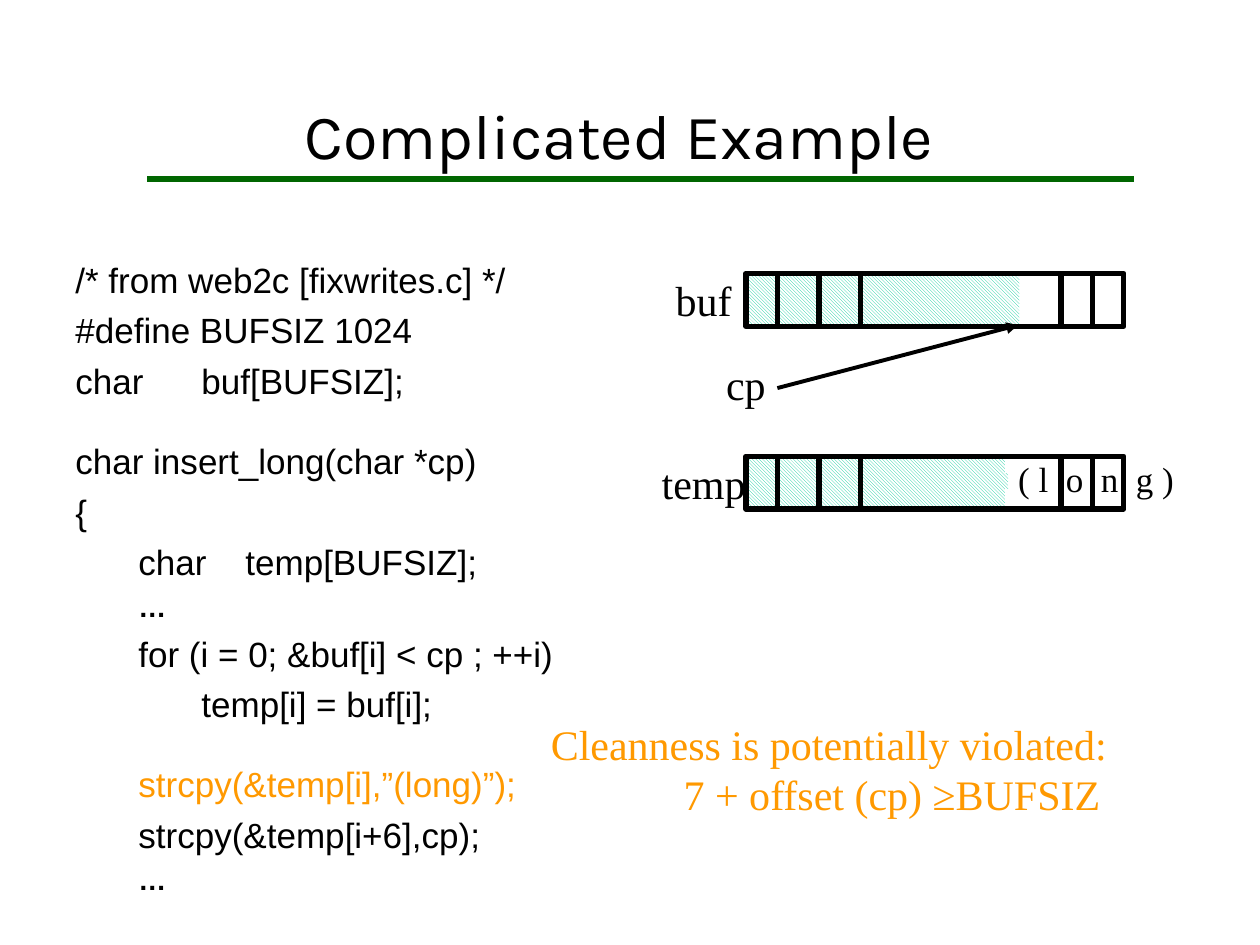
"""Build the slide "Complicated Example": a code listing beside two buffer diagrams."""
import pptx
import pptx.dml.color
import pptx.enum.dml
import pptx.enum.shapes
import pptx.enum.text
import pptx.oxml.ns
import pptx.util
from lxml import etree

Inches = pptx.util.Inches
Pt = pptx.util.Pt
BLACK = pptx.dml.color.RGBColor(0x00, 0x00, 0x00)
WHITE = pptx.dml.color.RGBColor(0xFF, 0xFF, 0xFF)
GREEN = pptx.dml.color.RGBColor(0x00, 0x66, 0x00)
TEAL = pptx.dml.color.RGBColor(0x00, 0xCC, 0x99)
ORANGE = pptx.dml.color.RGBColor(0xFF, 0x99, 0x00)
CENTER = pptx.enum.text.PP_ALIGN.CENTER
RECTANGLE = pptx.enum.shapes.MSO_SHAPE.RECTANGLE
SERIF = "Times New Roman"

presentation = pptx.Presentation()
presentation.slide_width = Inches(10)
presentation.slide_height = Inches(7.5)
slide = presentation.slides.add_slide(presentation.slide_layouts[5])


def add_run(paragraph, text, size, font, color, bold=False):
    run = paragraph.add_run()
    run.text = text
    run.font.size = Pt(size)
    run.font.name = font
    run.font.bold = bold
    run.font.color.rgb = color


def add_line(x1, y1, x2, y2, color=BLACK, width=3):
    line = slide.shapes.add_connector(
        pptx.enum.shapes.MSO_CONNECTOR.STRAIGHT,
        Inches(x1), Inches(y1), Inches(x2), Inches(y2))
    line.line.color.rgb = color
    line.line.width = Pt(width)
    etree.SubElement(line._element.spPr, pptx.oxml.ns.qn("a:effectLst"))
    return line


add_line(1.17, 1.42, 9, 1.42, GREEN)

title = slide.shapes.title
title.left, title.top = Inches(0.42), Inches(0.21)
title.width, title.height = Inches(9.25), Inches(1.21)
title.text_frame.auto_size = pptx.enum.text.MSO_AUTO_SIZE.NONE
title.text_frame.vertical_anchor = pptx.enum.text.MSO_ANCHOR.BOTTOM
title.text_frame.margin_right = Inches(0.36)
title.text_frame.paragraphs[0].alignment = CENTER
add_run(title.text_frame.paragraphs[0], "Complicated Example", 36, "Karla", BLACK)

code_lines = [
    ("/* from web2c [fixwrites.c] */", 20, BLACK, 5),
    ("#define BUFSIZ 1024", 20, BLACK, 5),
    ("char\tbuf[BUFSIZ];", 20, BLACK, 5),
    ("char insert_long(char *cp)", 20, BLACK, 21.5),
    ("{", 20, BLACK, 5),
    ("\tchar    temp[BUFSIZ];", 20, BLACK, 5),
    ("\t…", 16, BLACK, 4),
    ("\tfor (i = 0; &buf[i] < cp ; ++i)", 20, BLACK, 5),
    ("\t\ttemp[i] = buf[i];", 20, BLACK, 5),
    ("\tstrcpy(&temp[i],”(long)”);", 20, ORANGE, 21.5),
    ("\tstrcpy(&temp[i+6],cp);", 20, BLACK, 5),
    ("\t…", 16, BLACK, 4),
]
code_box = slide.shapes.add_textbox(Inches(0.5), Inches(2), Inches(4.42), Inches(4.92))
code_box.text_frame.word_wrap = True
for index, (text, size, color, space_before) in enumerate(code_lines):
    paragraph = (code_box.text_frame.add_paragraph() if index
                 else code_box.text_frame.paragraphs[0])
    paragraph.space_before = Pt(space_before)
    properties = paragraph._p.get_or_add_pPr()
    properties.set("marL", str(Inches(0.5)))
    properties.set("indent", str(Inches(-0.5)))
    add_run(paragraph, text, size, "Arial", color, bold=size == 16)

buffer_left, buffer_width, buffer_height = 5.92, 3, 0.42
for top, filled_width in ((2.17, 2.17), (3.62, 2.08)):
    contents = slide.shapes.add_shape(
        RECTANGLE, Inches(buffer_left), Inches(top),
        Inches(filled_width), Inches(buffer_height))
    contents.shadow.inherit = False
    contents.fill.patterned()
    contents.fill.pattern = pptx.enum.dml.MSO_PATTERN.DARK_DOWNWARD_DIAGONAL
    contents.fill.fore_color.rgb = TEAL
    contents.fill.back_color.rgb = WHITE
    if top == 3.62:
        contents.line.color.rgb = WHITE
        contents.line.width = Pt(3)
        contents.line.dash_style = pptx.enum.dml.MSO_LINE.DASH
    else:
        contents.line.fill.background()

    frame = slide.shapes.add_shape(
        RECTANGLE, Inches(buffer_left), Inches(top),
        Inches(buffer_width), Inches(buffer_height))
    frame.shadow.inherit = False
    frame.fill.background()
    frame.line.color.rgb = BLACK
    frame.line.width = Pt(3)
    for x in (6.17, 6.5, 6.83, 8.42, 8.67):
        add_line(x, top, x, top + buffer_height)

pointer = add_line(6.17, 3.08, 8.08, 2.58, width=2.25)
etree.SubElement(pointer.line._get_or_add_ln(), pptx.oxml.ns.qn("a:tailEnd"), type="triangle")

labels = [
    (["buf"], 5.26, 2.13, 0.65, 0.5, 24, BLACK, False),
    (["cp"], 5.66, 2.8, 0.52, 0.5, 24, BLACK, False),
    (["temp"], 5.15, 3.58, 0.87, 0.5, 24, BLACK, False),
    (["( l  o  n  g )"], 7.9, 3.58, 1.6, 0.43, 20, BLACK, True),
    (["Cleanness is potentially violated:", "7 + offset (cp) ≥BUFSIZ"],
     4.08, 5.65, 5, 0.9, 24, ORANGE, True),
]
for texts, left, top, width, height, size, color, wrap in labels:
    label = slide.shapes.add_textbox(Inches(left), Inches(top), Inches(width), Inches(height))
    label.text_frame.word_wrap = wrap
    label.text_frame.auto_size = pptx.enum.text.MSO_AUTO_SIZE.SHAPE_TO_FIT_TEXT
    for index, text in enumerate(texts):
        paragraph = (label.text_frame.add_paragraph() if index
                     else label.text_frame.paragraphs[0])
        paragraph.alignment = CENTER
        paragraph._p.get_or_add_pPr().set("marL", str(Inches(index)))
        add_run(paragraph, text, size, SERIF, color)

presentation.save("out.pptx")
